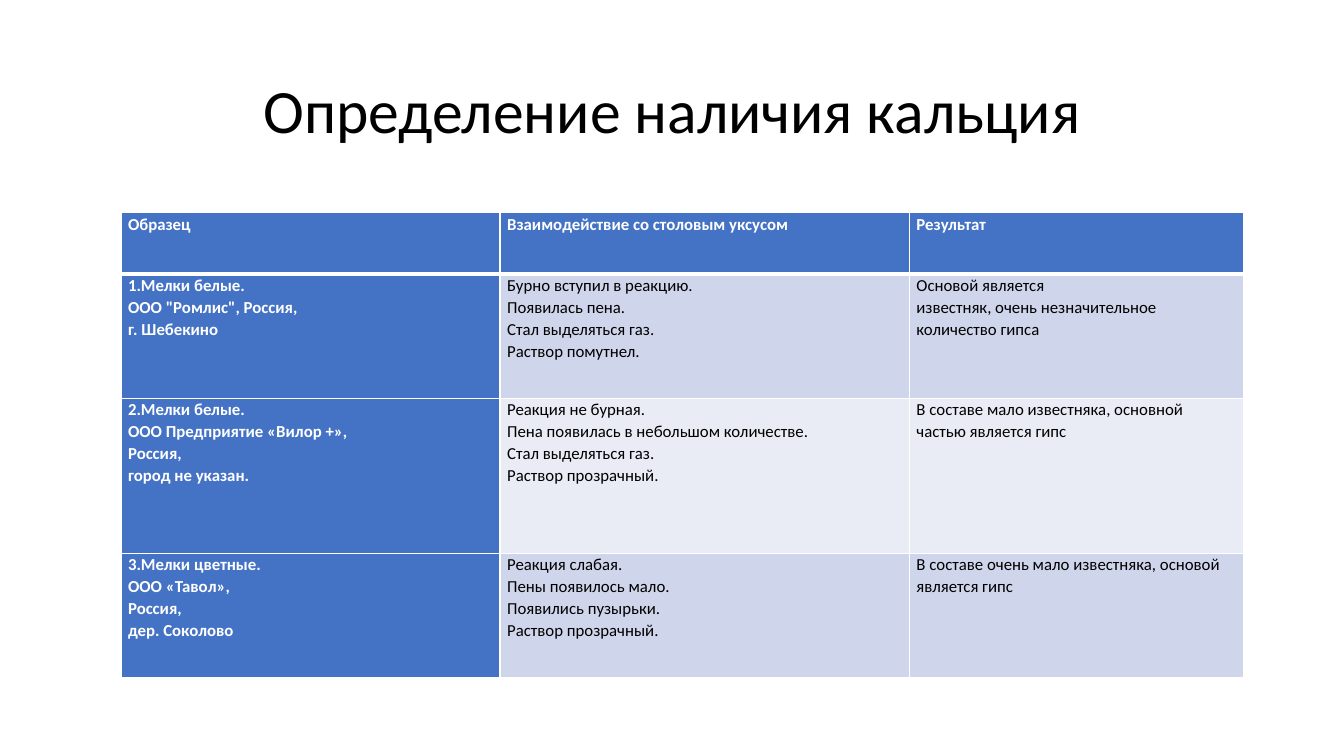
from lxml import etree
from pptx import Presentation
from pptx import util as u
from pptx.dml.color import RGBColor
from pptx.enum import text
from pptx.oxml.ns import qn

BLUE, WHITE, BLACK = "4472C4", "FFFFFF", "000000"
BANDS = ["CFD5EA", "E9EBF5"]


def rgb(value):
    return RGBColor.from_string(value)


class Deck:
    """Holds the style and the current slide."""
    font = "Calibri"

    def __init__(self):
        self.prs = Presentation()
        self.prs.slide_width, self.prs.slide_height = u.Inches(13.33), u.Inches(7.5)
        self.slide = self.prs.slides.add_slide(self.prs.slide_layouts[6])

    def paragraphs(self, tf, lines, color, size, spacing, bold=False, align=None):
        for i, line in enumerate(lines):
            p = tf.paragraphs[0] if i == 0 else tf.add_paragraph()
            p.line_spacing, p.alignment = spacing, align
            r = p.add_run()
            r.text = line
            r.font.color.rgb = rgb(color)
            for name, value in dict(name=self.font, size=u.Pt(size), bold=bold).items():
                setattr(r.font, name, value)

    def title(self, line, left, top, width, height):
        box = map(u.Inches, (left, top, width, height))
        tf = self.slide.shapes.add_textbox(*box).text_frame
        tf.word_wrap = True
        tf.vertical_anchor = text.MSO_ANCHOR.MIDDLE
        self.paragraphs(tf, [line], BLACK, 44, 0.9, align=text.PP_ALIGN.CENTER)

    def borders(self, cell, widths):
        tc_pr = cell._tc.get_or_add_tcPr()
        for side, width in widths.items():
            ln = etree.SubElement(tc_pr, qn(f"a:ln{side}"), w=str(u.Pt(width)))
            fill = etree.SubElement(ln, qn("a:solidFill"))
            etree.SubElement(fill, qn("a:srgbClr"), val=WHITE)

    def table(self, rows, left, top, widths, heights):
        box = map(u.Inches, (left, top, sum(widths), sum(heights)))
        table = self.slide.shapes.add_table(len(rows), len(widths), *box).table
        for col, width in zip(table.columns, widths):
            col.width = u.Inches(width)
        for row, height in zip(table.rows, heights):
            row.height = u.Inches(height)
        for i, row in enumerate(rows):
            for j, lines in enumerate(row):
                cell = table.cell(i, j)
                heading = i == 0 or j == 0
                margins = dict(margin_left=0.07, margin_right=0.07,
                               margin_top=0, margin_bottom=0)
                for name, value in margins.items():
                    setattr(cell, name, u.Inches(value))
                # A thick rule divides the header from the body
                self.borders(cell, dict(L=1, R=1, T=3 if i == 1 else 1,
                                        B=3 if i == 0 else 1))
                cell.fill.solid()
                cell.fill.fore_color.rgb = rgb(BLUE if heading else BANDS[(i - 1) % 2])
                self.paragraphs(cell.text_frame, lines, WHITE if heading else BLACK,
                                12, 1.07, bold=heading)


# Content: one list of paragraphs per cell
ROWS = [
    [["Образец"], ["Взаимодействие со столовым уксусом"], ["Результат"]],
    [["1.Мелки белые.", 'ООО "Ромлис", Россия,', "г. Шебекино"],
     ["Бурно вступил в реакцию.", "Появилась пена.",
      "Стал выделяться газ.", "Раствор помутнел."],
     ["Основой является", "известняк, очень незначительное количество гипса"]],
    [["2.Мелки белые.", "ООО Предприятие «Вилор +»,", "Россия,", "город не указан."],
     ["Реакция не бурная.", "Пена появилась в небольшом количестве.",
      "Стал выделяться газ.", "Раствор прозрачный."],
     ["В составе мало известняка, основной частью является гипс"]],
    [["3.Мелки цветные.", "ООО «Тавол»,", "Россия,", "дер. Соколово"],
     ["Реакция слабая.", "Пены появилось мало.",
      "Появились пузырьки.", "Раствор прозрачный."],
     ["В составе очень мало известняка, основой является гипс"]],
]


def main():
    s = Deck()
    s.title("Определение наличия кальция", 0.92, 0.4, 11.5, 1.45)
    s.table(ROWS, 1.2, 2.11, [3.76, 4.06, 3.31], [0.61, 1.23, 1.54, 1.23])
    s.prs.save("out.pptx")


if __name__ == "__main__":
    main()
